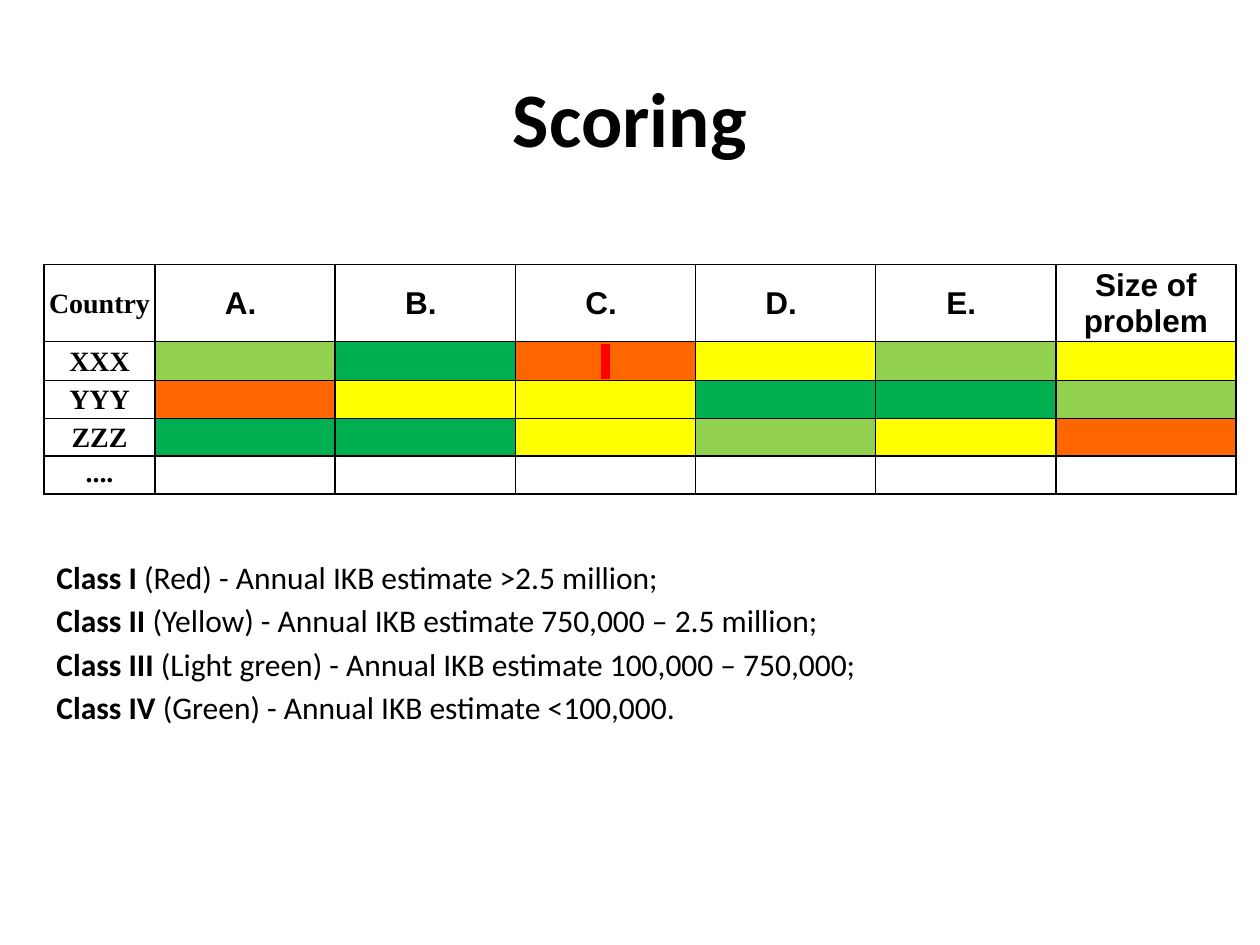
"""Build the country scoring slide with its colour table and class legend."""
from dataclasses import dataclass
from typing import Optional

from lxml import etree
from pptx import Presentation
from pptx import util as u
from pptx.dml.color import RGBColor
from pptx.enum import text
from pptx.oxml import ns

SCALE = 9144


@dataclass(frozen=True)
class Theme:
    ink: str = "000000"
    alert: str = "FF0000"
    red: str = "FF6600"
    yellow: str = "FFFF00"
    light: str = "92D050"
    green: str = "00B050"
    sans: str = "Calibri"
    heading: str = "Arial"
    serif: str = "Times New Roman"
    title_size: int = 44
    body_size: int = 18
    label_size: int = 16
    border: float = 1
    legend_gap: float = 3.2


@dataclass(frozen=True)
class Frame:
    left: int
    top: int
    width: int
    height: int


@dataclass(frozen=True)
class CountryRow:
    name: str
    scores: tuple
    anchor: text.MSO_ANCHOR = text.MSO_ANCHOR.MIDDLE


@dataclass(frozen=True)
class LegendLine:
    name: str
    meaning: str


THEME = Theme()
TITLE = Frame(50, 30, 900, 125)
TABLE = Frame(35, 210, 946, 177)
LEGEND = Frame(35, 438, 900, 189)
COLUMNS = (88,) + (143,) * 6
ROWS = (57,) + (30,) * 4
HEADINGS = ("Country", "A. ", "B. ", "C. ", "D. ", "E. ", "Size of problem")
COUNTRIES = (
    CountryRow("XXX", (THEME.light, THEME.green, THEME.red, THEME.yellow, THEME.light, THEME.yellow)),
    CountryRow("YYY", (THEME.red, THEME.yellow, THEME.yellow, THEME.green, THEME.green, THEME.light)),
    CountryRow("ZZZ", (THEME.green, THEME.green, THEME.yellow, THEME.light, THEME.yellow, THEME.red)),
    CountryRow("....", (None,) * 6, text.MSO_ANCHOR.TOP),
)
CLASSES = (
    LegendLine("Class I ", "(Red) - Annual IKB estimate >2.5 million;"),
    LegendLine("Class II ", "(Yellow) - Annual IKB estimate 750,000 – 2.5 million;"),
    LegendLine("Class III ", "(Light green) - Annual IKB estimate 100,000 – 750,000;"),
    LegendLine("Class IV ", "(Green) - Annual IKB estimate <100,000."),
)


def px(length: int) -> u.Emu:
    return u.Emu(length * SCALE)


def place(frame: Frame) -> tuple:
    return px(frame.left), px(frame.top), px(frame.width), px(frame.height)


def style(span, size: int, face: str, bold: bool = True) -> None:
    span.font.size = u.Pt(size)
    span.font.name = face
    span.font.bold = bold
    span.font.color.rgb = RGBColor.from_string(THEME.ink)


def add_solid(parent, colour: str) -> None:
    fill = etree.SubElement(parent, ns.qn("a:solidFill"))
    etree.SubElement(fill, ns.qn("a:srgbClr"), val=colour)


def format_cell(cell, colour: Optional[str], anchor: text.MSO_ANCHOR) -> None:
    cell.margin_left = cell.margin_right = cell.margin_top = px(1)
    cell.margin_bottom = px(0)
    cell.vertical_anchor = anchor
    properties = cell._tc.get_or_add_tcPr()
    for side in ("lnL", "lnR", "lnT", "lnB"):
        line = etree.SubElement(properties, ns.qn(f"a:{side}"), w=str(u.Pt(THEME.border)))
        add_solid(line, THEME.ink)
    if colour:
        cell.fill.solid()
        cell.fill.fore_color.rgb = RGBColor.from_string(colour)
    else:
        cell.fill.background()


def write_cell(cell, words: str, size: int, face: str) -> None:
    para = cell.text_frame.paragraphs[0]
    para.alignment = text.PP_ALIGN.CENTER
    para.text = words
    for span in para.runs:
        style(span, size, face)
    if not words:
        para._p.get_or_add_endParaRPr().set("sz", str(size * 100))


def highlight(span, colour: str) -> None:
    mark = etree.Element(ns.qn("a:highlight"))
    etree.SubElement(mark, ns.qn("a:srgbClr"), val=colour)
    span.font._element.find(ns.qn("a:solidFill")).addnext(mark)


def draw_title(page) -> None:
    box = page.shapes.add_textbox(*place(TITLE))
    box.text_frame.word_wrap = True
    box.text_frame.vertical_anchor = text.MSO_ANCHOR.MIDDLE
    box.text_frame.text = "Scoring"
    para = box.text_frame.paragraphs[0]
    para.alignment = text.PP_ALIGN.CENTER
    style(para.runs[0], THEME.title_size, THEME.sans)


def draw_table(page) -> None:
    table = page.shapes.add_table(len(ROWS), len(COLUMNS), *place(TABLE)).table
    table.first_row = table.horz_banding = False
    for column, width in zip(table.columns, COLUMNS):
        column.width = px(width)
    for row, height in zip(table.rows, ROWS):
        row.height = px(height)
    for index, heading in enumerate(HEADINGS):
        cell = table.cell(0, index)
        format_cell(cell, None, text.MSO_ANCHOR.MIDDLE)
        if index:
            write_cell(cell, heading, THEME.body_size, THEME.heading)
        else:
            write_cell(cell, heading, THEME.label_size, THEME.serif)
    for row, country in enumerate(COUNTRIES, 1):
        for column, colour in enumerate((None,) + country.scores):
            cell = table.cell(row, column)
            format_cell(cell, colour, country.anchor)
            write_cell(cell, "" if column else country.name, THEME.label_size, THEME.serif)
    marked = table.cell(1, HEADINGS.index("C. "))
    write_cell(marked, " ", THEME.body_size, THEME.heading)
    highlight(marked.text_frame.paragraphs[0].runs[0], THEME.alert)


def draw_legend(page) -> None:
    frame = page.shapes.add_textbox(*place(LEGEND)).text_frame
    frame.word_wrap = True
    for index, line in enumerate(CLASSES):
        para = frame.add_paragraph() if index else frame.paragraphs[0]
        para.text = line.name
        para.add_run().text = line.meaning
        if index:
            para.space_before = u.Pt(THEME.legend_gap)
        properties = para._p.get_or_add_pPr()
        properties.set("marL", str(px(38)))
        properties.set("indent", str(-px(38)))
        for span, bold in zip(para.runs, (True, False)):
            style(span, THEME.body_size, THEME.sans, bold)


def main() -> None:
    deck = Presentation()
    deck.slide_width, deck.slide_height = px(1000), px(750)
    page = deck.slides.add_slide(deck.slide_layouts[6])
    draw_title(page)
    draw_legend(page)
    draw_table(page)
    deck.save("out.pptx")


if __name__ == "__main__":
    main()
